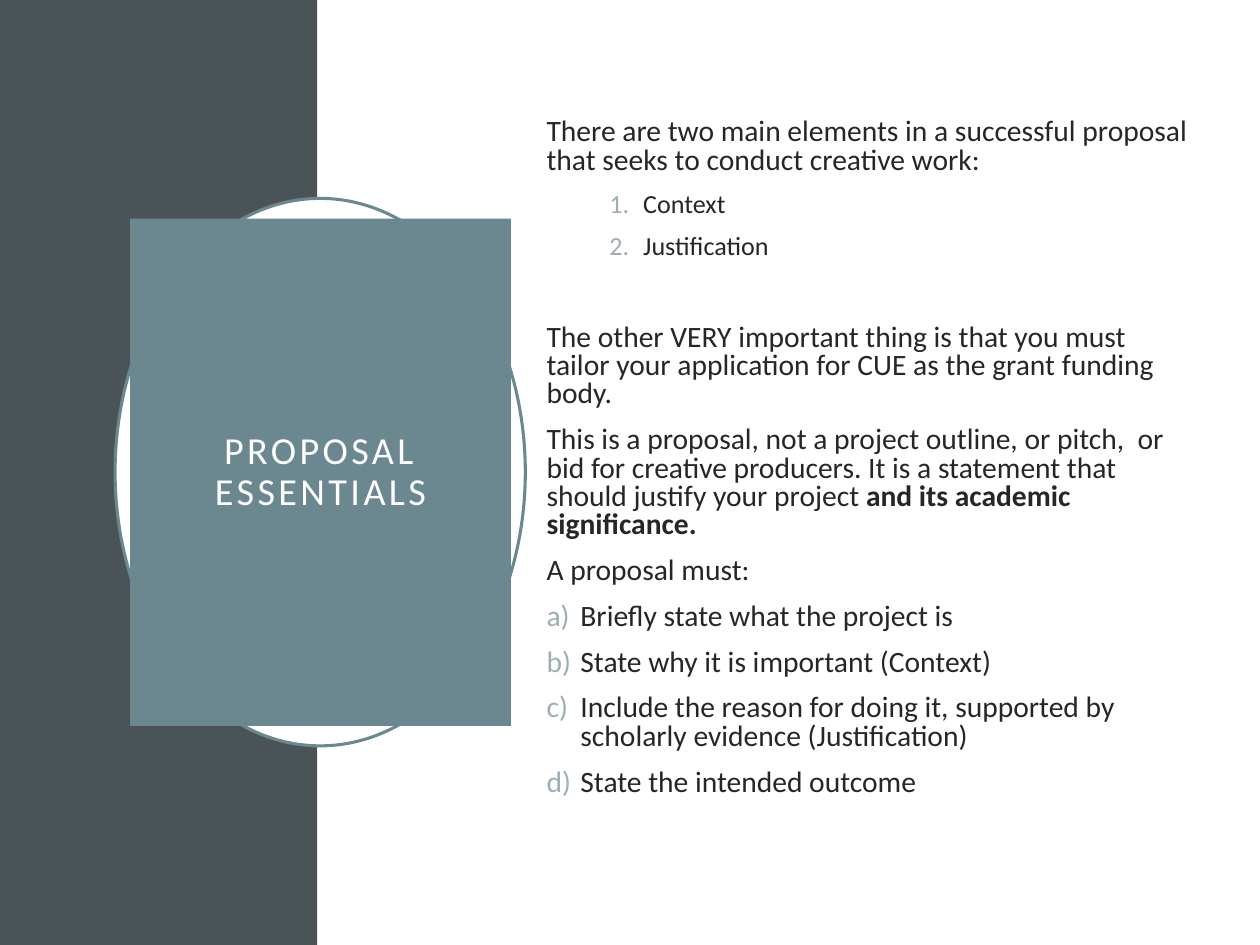
from lxml import etree
from pptx import Presentation
from pptx.dml.color import RGBColor
from pptx.enum.shapes import MSO_SHAPE
from pptx.enum.text import MSO_ANCHOR, PP_ALIGN
from pptx.oxml.ns import qn
from pptx.util import Cm, Pt

RECTANGLE = MSO_SHAPE.RECTANGLE
OVAL = MSO_SHAPE.OVAL
MIDDLE = MSO_ANCHOR.MIDDLE
CENTER = PP_ALIGN.CENTER

FONT = "Calibri"
COLORS = {
    "band": "4A5356",
    "teal": "6B8891",
    "white": "FFFFFF",
    "text": "262626",
    "number": "9BAFB5",
}
SLIDE_WIDTH, SLIDE_HEIGHT = 36.12, 27.1
BAND_WIDTH = 9.09
CARD = (3.73, 6.27, 10.92, 14.55)
RING = (3.3, 5.69, 11.76, 15.7)
BODY = (15.42, 3.71, 19.08, 20.9)
BODY_BOTTOM_INSET = 2.15
TITLE = "PROPOSAL ESSENTIALS"

STYLES = {
    "plain": {"size": 24, "before": 14.2},
    "after_gap": {"size": 24, "before": 51.8},
    "numbered": {"size": 21.2, "before": 14.2, "margin": 2.77, "scheme": "arabicPeriod", "level": 2},
    "lettered": {"size": 24, "before": 14.2, "margin": 0.97, "scheme": "alphaLcParenR"},
}
HANGING = 0.97

PARAGRAPHS = [
    ("plain", ["There are two main elements in a successful proposal that seeks to conduct creative work:"]),
    ("numbered", ["Context"]),
    ("numbered", ["Justification"]),
    ("after_gap", ["The other VERY important thing is that you must tailor your application for CUE "
                   "as the grant funding body."]),
    ("plain", ["This is a proposal, not a project outline, or pitch,  or bid for creative producers. "
               "It is a statement that should justify your project ",
               "and its academic significance."]),
    ("plain", ["A proposal must:"]),
    ("lettered", ["Briefly state what the project is"]),
    ("lettered", ["State why it is important (Context)"]),
    ("lettered", ["Include the reason for doing it, supported by scholarly evidence (Justification)"]),
    ("lettered", ["State the intended outcome"]),
]


def color(name):
    return RGBColor.from_string(COLORS[name])


def add_panel(slide, kind, box, fill, line=None):
    shape = slide.shapes.add_shape(kind, *map(Cm, box))
    shape.shadow.inherit = False
    shape.fill.solid()
    shape.fill.fore_color.rgb = color(fill)
    if line:
        shape.line.color.rgb = color(line)
        shape.line.width = Pt(2.5)
    else:
        shape.line.fill.background()
    return shape


def format_run(run, size, color_name):
    run.font.name = FONT
    run.font.size = Pt(size)
    run.font.color.rgb = color(color_name)


def add_numbering(paragraph, margin, scheme):
    properties = paragraph._p.get_or_add_pPr()
    properties.set("marL", str(Cm(margin)))
    properties.set("indent", str(-Cm(HANGING)))
    bullet_color = etree.SubElement(properties, qn("a:buClr"))
    etree.SubElement(bullet_color, qn("a:srgbClr"), val=COLORS["number"])
    etree.SubElement(properties, qn("a:buFont"), typeface=FONT)
    etree.SubElement(properties, qn("a:buAutoNum"), type=scheme)


def add_title(slide):
    card = add_panel(slide, RECTANGLE, CARD, "teal")
    frame = card.text_frame
    frame.word_wrap = True
    frame.vertical_anchor = MIDDLE
    frame.margin_left = frame.margin_right = Cm(0.5)
    frame.margin_top = frame.margin_bottom = Cm(0.5)
    frame.text = TITLE
    paragraph = frame.paragraphs[0]
    paragraph.alignment = CENTER
    paragraph.line_spacing = 0.9
    run = paragraph.runs[0]
    format_run(run, 31, "white")
    run._r.get_or_add_rPr().set("spc", "280")


def add_body(slide):
    frame = slide.shapes.add_textbox(*map(Cm, BODY)).text_frame
    frame.word_wrap = True
    frame.vertical_anchor = MIDDLE
    frame.margin_bottom = Cm(BODY_BOTTOM_INSET)
    for index, (style_name, parts) in enumerate(PARAGRAPHS):
        style = STYLES[style_name]
        paragraph = frame.add_paragraph() if index else frame.paragraphs[0]
        paragraph.level = style.get("level", 0)
        paragraph.line_spacing = 0.8
        paragraph.space_before = Pt(style["before"])
        for position, text in enumerate(parts):
            run = paragraph.add_run()
            run.text = text
            format_run(run, style["size"], "text")
            run.font.bold = position > 0
        if "scheme" in style:
            add_numbering(paragraph, style["margin"], style["scheme"])


def main():
    presentation = Presentation()
    presentation.slide_width = Cm(SLIDE_WIDTH)
    presentation.slide_height = Cm(SLIDE_HEIGHT)
    slide = presentation.slides.add_slide(presentation.slide_layouts[6])
    add_panel(slide, RECTANGLE, (0, 0, BAND_WIDTH, SLIDE_HEIGHT), "band")
    add_panel(slide, OVAL, RING, "white", "teal")
    add_title(slide)
    add_body(slide)
    presentation.save("out.pptx")


if __name__ == "__main__":
    main()
